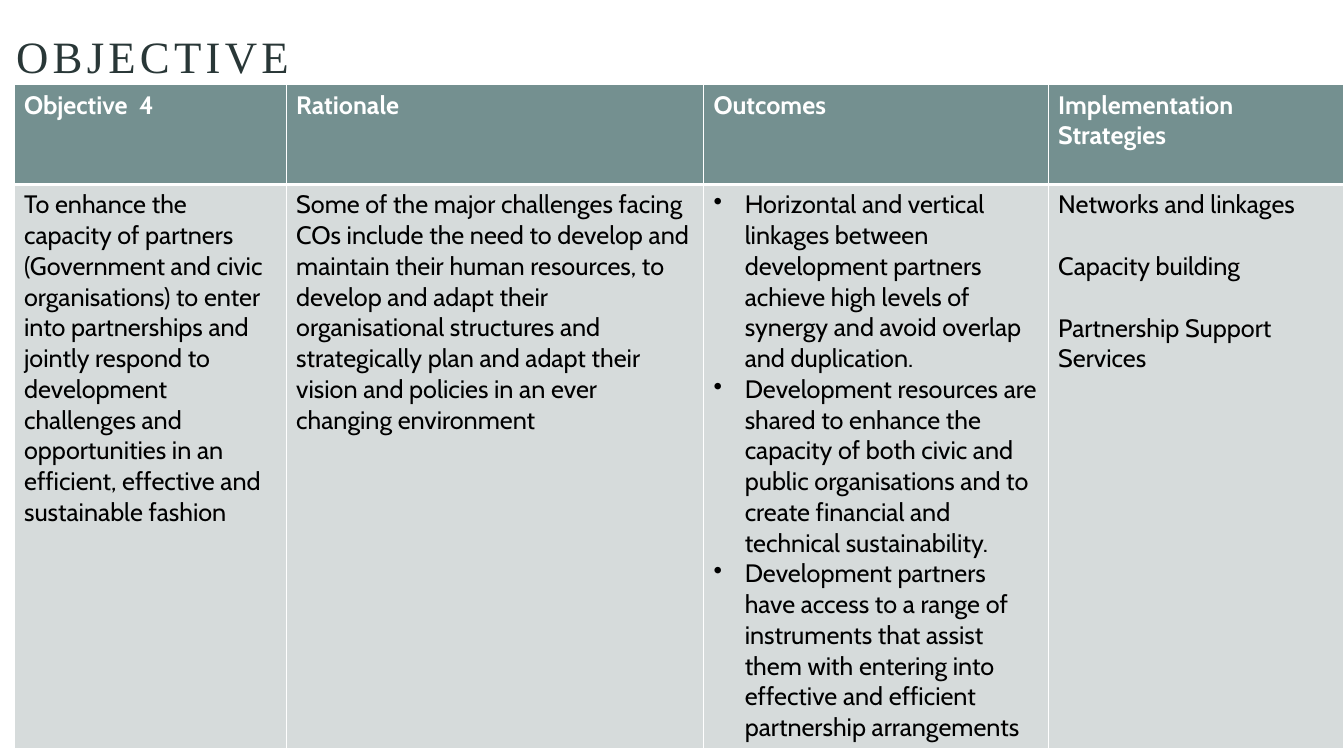
from lxml.etree import SubElement
from pptx import Presentation
from pptx.dml.color import RGBColor
from pptx.enum.text import MSO_ANCHOR, MSO_AUTO_SIZE, PP_ALIGN
from pptx.oxml.ns import qn
from pptx.util import Inches, Pt

HEAD = ["Objective  4", "Rationale", "Outcomes", "Implementation Strategies"]
BODY = [
    ["To enhance the capacity of partners (Government and civic organisations) "
     "to enter into partnerships and jointly respond to development challenges "
     "and opportunities in an efficient, effective and sustainable fashion"],
    ["Some of the major challenges facing COs include the need to develop and "
     "maintain their human resources, to develop and adapt their organisational "
     "structures and strategically plan and adapt their vision and policies in "
     "an ever changing environment"],
    ["Horizontal and vertical linkages between development partners achieve "
     "high levels of synergy and avoid overlap and duplication.",
     "Development resources are shared to enhance the capacity of both civic "
     "and public organisations and to create financial and technical "
     "sustainability.",
     "Development partners have access to a range of instruments that assist "
     "them with entering into effective and efficient partnership arrangements"],
    ["Networks and linkages", "Capacity building", "Partnership Support Services"],
]
WIDTHS = [19.44, 29.81, 24.62, 21.1]
HEIGHTS = [7.13, 40.25]


def color(code):
    return RGBColor.from_string(code)


class Deck:
    cols, rows = 96, 54
    font, size = "Cabin", 18
    serif, big = "Times New Roman", 32
    dark, teal, pale = "293737", "749090", "D6DBDB"
    white, black = "FFFFFF", "000000"

    def __init__(self):
        self.prs = Presentation()
        self.prs.slide_width = Inches(13.33)
        self.prs.slide_height = Inches(7.5)
        self.slide = self.prs.slides.add_slide(self.prs.slide_layouts[5])

    def x(self, n):
        return round(self.prs.slide_width * n / self.cols)

    def y(self, n):
        return round(self.prs.slide_height * n / self.rows)

    def box(self, left, top, width, height):
        return self.x(left), self.y(top), self.x(width), self.y(height)

    def run(self, para, text, font, size, code, bold=False):
        run = para.add_run()
        run.text = text
        run.font.name = font
        run.font.size = Pt(size)
        run.font.bold = bold
        run.font.color.rgb = color(code)
        return run

    def title(self, text, *place):
        shape = self.slide.shapes.title
        shape.left, shape.top, shape.width, shape.height = self.box(*place)
        frame = shape.text_frame
        frame.word_wrap = True
        frame.auto_size = MSO_AUTO_SIZE.NONE
        frame.vertical_anchor = MSO_ANCHOR.BOTTOM
        para = frame.paragraphs[0]
        para.alignment = PP_ALIGN.LEFT
        para.line_spacing = 0.9
        run = self.run(para, text, self.serif, self.big, self.dark)
        run.font._element.set("spc", "300")

    def border(self, cell, top, bottom):
        props = cell._tc.get_or_add_tcPr()
        for side, width in zip("LRTB", (1, 1, top, bottom)):
            line = SubElement(props, qn(f"a:ln{side}"), w=str(Pt(width)))
            fill = SubElement(line, qn("a:solidFill"))
            SubElement(fill, qn("a:srgbClr"), val=self.white)

    def bullet(self, para):
        props = para._p.get_or_add_pPr()
        props.set("marL", str(Inches(0.31)))
        props.set("indent", str(Inches(-0.31)))
        SubElement(props, qn("a:buChar"), char="•")

    def cell(self, cell, texts, head, dots=False):
        self.border(cell, *((1, 3) if head else (3, 1)))
        cell.fill.solid()
        cell.fill.fore_color.rgb = color(self.teal if head else self.pale)
        frame = cell.text_frame
        for i, text in enumerate(texts):
            para = frame.add_paragraph() if i else frame.paragraphs[0]
            if dots:
                self.bullet(para)
            elif i:
                para.space_before = Pt(22)
            ink = self.white if head else self.black
            self.run(para, text, self.font, self.size, ink, head)

    def table(self, left, top, widths, heights, head, body, dots):
        place = self.box(left, top, sum(widths), sum(heights))
        table = self.slide.shapes.add_table(2, len(head), *place).table
        for row, height in zip(table.rows, heights):
            row.height = self.y(height)
        for i, width in enumerate(widths):
            table.columns[i].width = self.x(width)
            self.cell(table.cell(0, i), [head[i]], True)
            self.cell(table.cell(1, i), body[i], False, i == dots)

    def save(self):
        self.prs.save("out.pptx")


def main():
    deck = Deck()
    deck.title("OBJECTIVE", 0.43, 0.65, 94.75, 5.69)
    deck.table(1, 6.05, WIDTHS, HEIGHTS, HEAD, BODY, HEAD.index("Outcomes"))
    deck.save()


if __name__ == "__main__":
    main()
